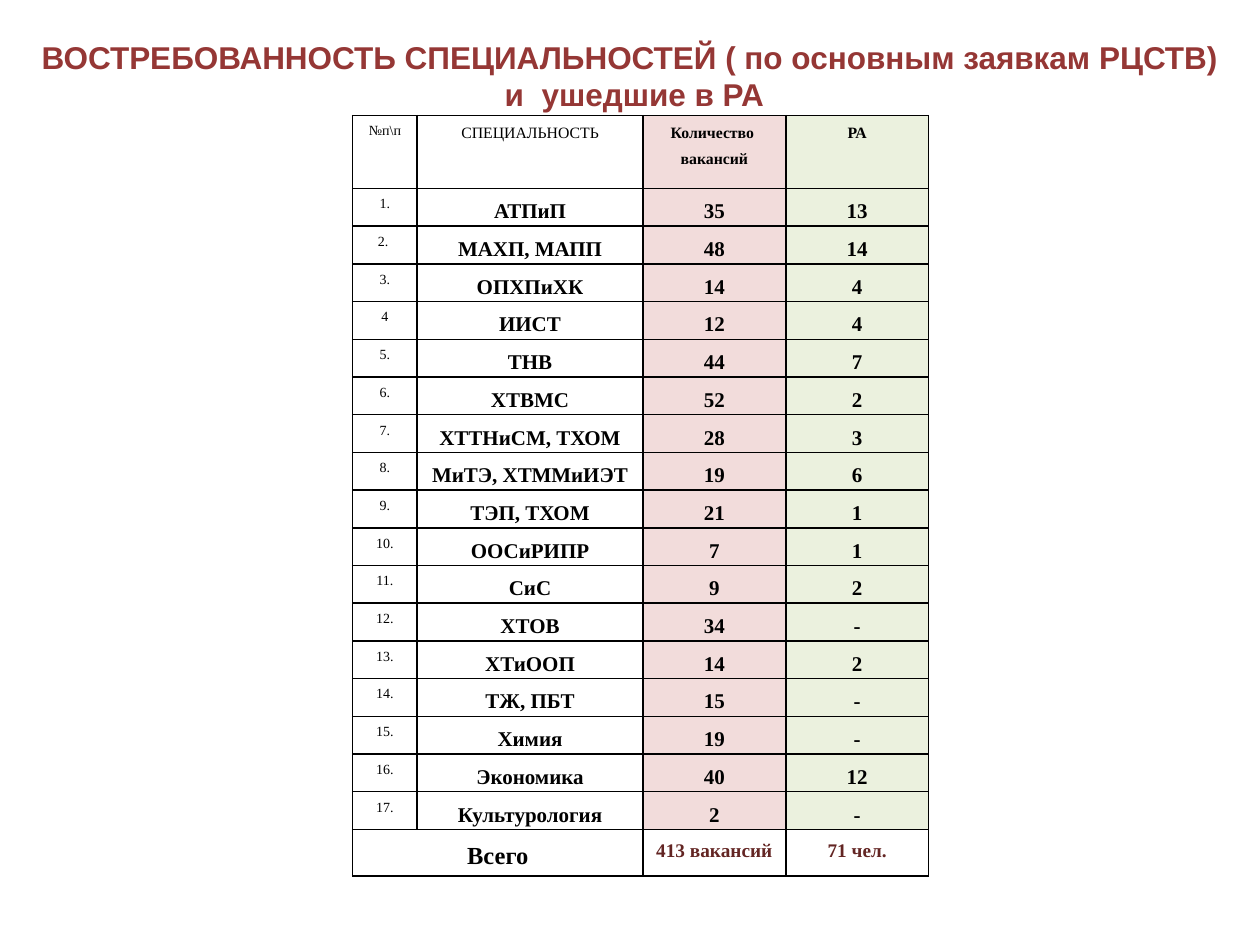
from typing import NamedTuple, Optional

from lxml.etree import SubElement
from pptx import Presentation
from pptx.dml.color import RGBColor
from pptx.enum.text import MSO_ANCHOR as Anchor, PP_ALIGN as Align
from pptx.oxml.ns import qn
from pptx.util import Cm, Pt

COLORS = {
    "title": "953735",
    "text": "000000",
    "total": "632523",
    "border": "000000",
    "vacancies": "F2DCDB",
    "army": "EBF1DE",
}
COLUMN_WIDTHS = [1.3, 4.55, 2.88, 2.88]
COLUMN_FILLS = [None, None, "vacancies", "army"]
HEADER_HEIGHT, ROW_HEIGHT, TOTAL_HEIGHT = 1.47, 0.76, 0.94
TITLE_LINES = [
    "ВОСТРЕБОВАННОСТЬ СПЕЦИАЛЬНОСТЕЙ ( по основным заявкам РЦСТВ)",
    " и  ушедшие в РА",
]


class Specialty(NamedTuple):
    number: str
    name: str
    vacancies: str
    army: str


class CellStyle(NamedTuple):
    size: int
    bold: bool = True
    color: str = "text"


HEADINGS = Specialty("№п\\п", "СПЕЦИАЛЬНОСТЬ", "Количество  вакансий", "РА")
SPECIALTIES = [
    Specialty("1.", "АТПиП", "35", "13"),
    Specialty("2. ", "МАХП, МАПП", "48", "14"),
    Specialty("3.", "ОПХПиХК", "14", "4"),
    Specialty("4", "ИИСТ", "12", "4"),
    Specialty("5.", "ТНВ", "44", "7"),
    Specialty("6.", "ХТВМС", "52", "2"),
    Specialty("7.", "ХТТНиСМ, ТХОМ", "28", "3"),
    Specialty("8.", "МиТЭ, ХТММиИЭТ", "19", "6"),
    Specialty("9.", "ТЭП, ТХОМ", "21", "1"),
    Specialty("10.", "ООСиРИПР", "7", "1"),
    Specialty("11.", "СиС", "9", "2"),
    Specialty("12.", "ХТОВ", "34", "-"),
    Specialty("13.", "ХТиООП", "14", "2"),
    Specialty("14.", "ТЖ, ПБТ", "15", "-"),
    Specialty("15.", "Химия", "19", "-"),
    Specialty("16.", "Экономика", "40", "12"),
    Specialty("17.", "Культурология", "2", "-"),
]
TOTALS = Specialty("Всего", "", "413 вакансий", "71 чел.")

NUMBER_STYLE = CellStyle(8, bold=False)
HEADING_STYLES = [NUMBER_STYLE, CellStyle(9, bold=False), CellStyle(9), CellStyle(9)]
ROW_STYLES = [NUMBER_STYLE] + [CellStyle(12)] * 3
TOTAL_STYLES = [CellStyle(14)] * 2 + [CellStyle(11, color="total")] * 2


def format_paragraph(para, font_name: str, style: CellStyle) -> None:
    para.alignment = Align.CENTER
    para.font.name = font_name
    para.font.size = Pt(style.size)
    para.font.bold = style.bold
    para.font.color.rgb = RGBColor.from_string(COLORS[style.color])


def add_title(page) -> None:
    title = page.shapes.title
    title.left, title.top = Cm(0.46), Cm(0.51)
    title.width, title.height = Cm(24.48), Cm(1.9)
    frame = title.text_frame
    frame.word_wrap = False
    frame.vertical_anchor = Anchor.BOTTOM
    frame.text = "\n".join(TITLE_LINES)
    for para in frame.paragraphs:
        format_paragraph(para, "Arial", CellStyle(18, color="title"))


def add_borders(cell) -> None:
    properties = cell._tc.get_or_add_tcPr()
    for side in ("a:lnL", "a:lnR", "a:lnT", "a:lnB"):
        line = SubElement(properties, qn(side), w=str(Pt(1)))
        fill = SubElement(line, qn("a:solidFill"))
        SubElement(fill, qn("a:srgbClr"), val=COLORS["border"])


def fill_cell(cell, text: str, style: CellStyle, fill: Optional[str]) -> None:
    add_borders(cell)
    if fill:
        cell.fill.solid()
        cell.fill.fore_color.rgb = RGBColor.from_string(COLORS[fill])
    else:
        cell.fill.background()
    cell.margin_left = cell.margin_right = Cm(0.13)
    cell.margin_top = cell.margin_bottom = 0
    cell.text = text
    para = cell.text_frame.paragraphs[0]
    para.line_spacing = 1.5
    format_paragraph(para, "Times New Roman", style)


def add_specialty_table(page) -> None:
    rows = [HEADINGS, *SPECIALTIES, TOTALS]
    heights = [HEADER_HEIGHT] + [ROW_HEIGHT] * len(SPECIALTIES) + [TOTAL_HEIGHT]
    styles = [HEADING_STYLES] + [ROW_STYLES] * len(SPECIALTIES) + [TOTAL_STYLES]
    fills = [COLUMN_FILLS] * (len(rows) - 1) + [[None] * len(COLUMN_WIDTHS)]

    table = page.shapes.add_table(
        len(rows), len(COLUMN_WIDTHS), Cm(7.11), Cm(2.33),
        Cm(sum(COLUMN_WIDTHS)), Cm(sum(heights)),
    ).table
    for column, width in zip(table.columns, COLUMN_WIDTHS):
        column.width = Cm(width)
    for row, height, values, row_styles, row_fills in zip(
        table.rows, heights, rows, styles, fills
    ):
        row.height = Cm(height)
        for cell, text, style, fill in zip(row.cells, values, row_styles, row_fills):
            fill_cell(cell, text, style, fill)
    last = len(rows) - 1
    table.cell(last, 0).merge(table.cell(last, 1))


def main() -> None:
    deck = Presentation()
    deck.slide_width, deck.slide_height = Cm(25.4), Cm(19.05)
    page = deck.slides.add_slide(deck.slide_layouts.get_by_name("Title Only"))
    add_title(page)
    add_specialty_table(page)
    deck.save("out.pptx")


if __name__ == "__main__":
    main()
